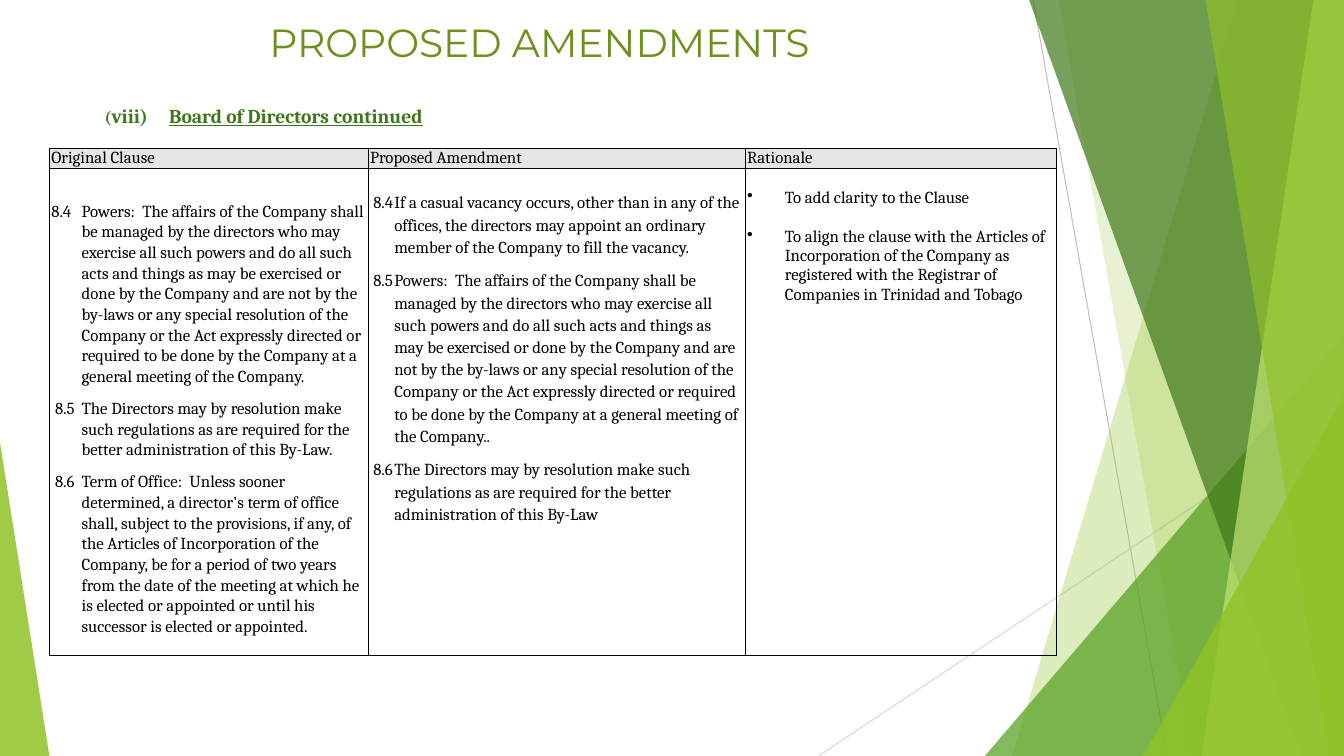
from lxml.etree import SubElement
from pptx import Presentation
from pptx.dml.color import RGBColor
from pptx.enum.shapes import MSO_CONNECTOR, MSO_SHAPE
from pptx.enum.text import MSO_ANCHOR, PP_ALIGN
from pptx.oxml import parse_xml
from pptx.oxml.ns import nsdecls, qn
from pptx.util import Pt

COLORS = {
    "lime": "90C226", "green": "54A021", "forest": "3F7819", "pale": "C0E474",
    "title": "6C921D", "header": "E7E6E6", "black": "000000",
    "gray": "BFBFBF", "light_gray": "D9D9D9",
}
WIDTH, HEIGHT = 960, 540
FONT = "Cambria"

POWERS = (
    "Powers:  The affairs of the Company shall be managed by the directors who may "
    "exercise all such powers and do all such acts and things as may be exercised or done "
    "by the Company and are not by the by-laws or any special resolution of the Company or "
    "the Act expressly directed or required to be done by the Company at a general meeting "
    "of the Company."
)
REGULATIONS = (
    "The Directors may by resolution make such regulations as are required for the better "
    "administration of this By-Law"
)
TERM = (
    "Term of Office:  Unless sooner determined, a director's term of office shall, subject "
    "to the provisions, if any, of the Articles of Incorporation of the Company, be for a "
    "period of two years from the date of the meeting at which he is elected or appointed "
    "or until his successor is elected or appointed."
)
VACANCY = (
    "If a casual vacancy occurs, other than in any of the offices, the directors may "
    "appoint an ordinary member of the Company to fill the vacancy."
)
ORIGINAL = [("8.4", POWERS, -21.6), ("8.5", REGULATIONS + ".", -19),
            ("8.6", TERM, -19)]
PROPOSED = [("8.4", VACANCY, -15), ("8.5", POWERS + ".", -15),
            ("8.6", REGULATIONS, -15)]
RATIONALE = [
    "To add clarity to the Clause",
    "To align the clause with the Articles of Incorporation of the Company as registered "
    "with the Registrar of Companies in Trinidad and Tobago",
]


def color(name):
    """Return the named colour."""
    return RGBColor.from_string(COLORS[name])


def style_facet(shape, name, opacity):
    """Give a decorative shape a translucent fill and no outline."""
    shape.shadow.inherit = False
    shape.line.fill.background()
    shape.fill.solid()
    shape.fill.fore_color.rgb = color(name)
    tint = shape.fill._xPr.find(".//" + qn("a:srgbClr"))
    SubElement(tint, qn("a:alpha"), val=str(opacity * 1000))


def add_facet(page, top_x, bottom_x, name, opacity):
    """Add a full-height facet that reaches the right edge."""
    builder = page.shapes.build_freeform(Pt(top_x), 0, scale=1.0)
    corners = [(WIDTH, 0), (WIDTH, HEIGHT), (bottom_x, HEIGHT)]
    builder.add_line_segments([(Pt(x), Pt(y)) for x, y in corners], close=True)
    style_facet(builder.convert_to_shape(), name, opacity)


def add_triangle(page, left, top, width, apex, name, opacity):
    """Add a triangle that stands on the bottom edge."""
    shape = page.shapes.add_shape(MSO_SHAPE.ISOSCELES_TRIANGLE, Pt(left), Pt(top),
                                  Pt(width), Pt(HEIGHT - top))
    shape.adjustments[0] = apex
    style_facet(shape, name, opacity)


def add_line(page, x1, y1, x2, y2, name):
    """Add a thin decorative line."""
    line = page.shapes.add_connector(MSO_CONNECTOR.STRAIGHT,
                                     Pt(x1), Pt(y1), Pt(x2), Pt(y2))
    line.line.color.rgb = color(name)
    line.line.width = Pt(0.75)
    SubElement(line._element.spPr, qn("a:effectLst"))


def add_decoration(page):
    """Draw the green facets along both sides."""
    add_line(page, 738, 0, 833.76, HEIGHT, "gray")
    add_line(page, WIDTH, 290.16, 584.64, HEIGHT, "light_gray")
    add_facet(page, 884.16, 722.88, "lime", 30)
    add_facet(page, 756, 851.76, "lime", 20)
    add_triangle(page, 703.5, 239.76, 256.5, 1, "green", 72)
    add_facet(page, 735.12, 929.52, "forest", 70)
    add_facet(page, 938.16, 858.24, "pale", 70)
    add_facet(page, 861.12, 948.96, "lime", 65)
    add_triangle(page, 816.6, 282.96, 143.4, 1, "lime", 80)
    add_triangle(page, 0, 316.08, 35.3, 0, "lime", 85)


def set_title(page, text):
    """Place and format the title."""
    title = page.shapes.title
    title.left, title.top, title.width, title.height = Pt(46.8), Pt(9.4), Pt(676.8), Pt(48.2)
    frame = title.text_frame
    frame.text = text
    frame.vertical_anchor = MSO_ANCHOR.TOP
    para = frame.paragraphs[0]
    para.alignment = PP_ALIGN.CENTER
    para.font.name, para.font.size = "Montserrat", Pt(28)
    para.font.color.rgb = color("title")


def set_indent(para, left, hanging):
    """Set the left margin and first-line indent."""
    props = para._p.get_or_add_pPr()
    props.set("marL", str(Pt(left)))
    props.set("indent", str(Pt(hanging)))
    return props


def add_subtitle(page):
    """Add the numbered section heading."""
    box = page.shapes.add_textbox(Pt(67.7), Pt(70.6), Pt(397.4), Pt(24.5))
    frame = box.text_frame
    frame.word_wrap = True
    frame.vertical_anchor = MSO_ANCHOR.MIDDLE
    para = frame.paragraphs[0]
    set_indent(para, 46, -46)
    para.font.name, para.font.bold = FONT, True
    para.font.color.rgb = color("forest")
    for text, size in (("(", 12), ("viii)\t", 14), ("Board of Directors continued", 14)):
        span = para.add_run()
        span.text = text
        span.font.size = Pt(size)
    span.font.underline = True


def format_cell(cell, top=0):
    """Set margins and black borders of a cell."""
    cell.margin_left = cell.margin_right = Pt(1.44)
    cell.margin_top, cell.margin_bottom = Pt(top), 0
    props = cell._tc.get_or_add_tcPr()
    for index, side in enumerate("LRTB"):
        props.insert(index, parse_xml(
            f'<a:ln{side} {nsdecls("a")} w="{Pt(1)}"><a:solidFill>'
            f'<a:srgbClr val="{COLORS["black"]}"/></a:solidFill></a:ln{side}>'))


def write_paragraphs(cell, texts):
    """Write one paragraph per text and return the paragraphs."""
    cell.text_frame.text = "\n".join(texts)
    for para in cell.text_frame.paragraphs:
        para.font.name, para.font.size = FONT, Pt(12)
        para.font.color.rgb = color("black")
    return cell.text_frame.paragraphs


def fill_clauses(cell, clauses, left, spacing):
    """Write numbered clauses with hanging indents."""
    paras = write_paragraphs(cell, [f"{number}\t{text}" for number, text, _ in clauses])
    for para, (_, _, hanging) in zip(paras, clauses):
        set_indent(para, left, hanging)
        para.line_spacing, para.space_after = spacing, Pt(8)


def fill_bullets(cell, texts):
    """Write bulleted reasons."""
    for para in write_paragraphs(cell, texts):
        para.space_after = Pt(14)
        SubElement(set_indent(para, 27, -27), qn("a:buChar"), char="•")


def add_amendments(page):
    """Add the table that compares the clauses."""
    frame = page.shapes.add_table(2, 3, Pt(35.3), Pt(106), Pt(719.3), Pt(362))
    table = frame.table
    table.first_row = table.horz_banding = False
    for column, width in zip(table.columns, (227.7, 269.3, 222.3)):
        column.width = Pt(width)
    for row, height in zip(table.rows, (14, 348)):
        row.height = Pt(height)
    headings = ("Original Clause", "Proposed Amendment", "Rationale")
    for index, (heading, top) in enumerate(zip(headings, (23, 16, 14))):
        head, body = table.cell(0, index), table.cell(1, index)
        head.fill.solid()
        head.fill.fore_color.rgb = color("header")
        body.fill.background()
        format_cell(head)
        format_cell(body, top)
        write_paragraphs(head, [heading])
    fill_clauses(table.cell(1, 0), ORIGINAL, 21.6, 1.07)
    fill_clauses(table.cell(1, 1), PROPOSED, 17.3, 1.15)
    fill_bullets(table.cell(1, 2), RATIONALE)


def main():
    """Build and save the slide."""
    deck = Presentation()
    deck.slide_width, deck.slide_height = Pt(WIDTH), Pt(HEIGHT)
    page = deck.slides.add_slide(deck.slide_layouts[5])
    add_decoration(page)
    set_title(page, "PROPOSED AMENDMENTS")
    add_subtitle(page)
    add_amendments(page)
    deck.save("out.pptx")


if __name__ == "__main__":
    main()
